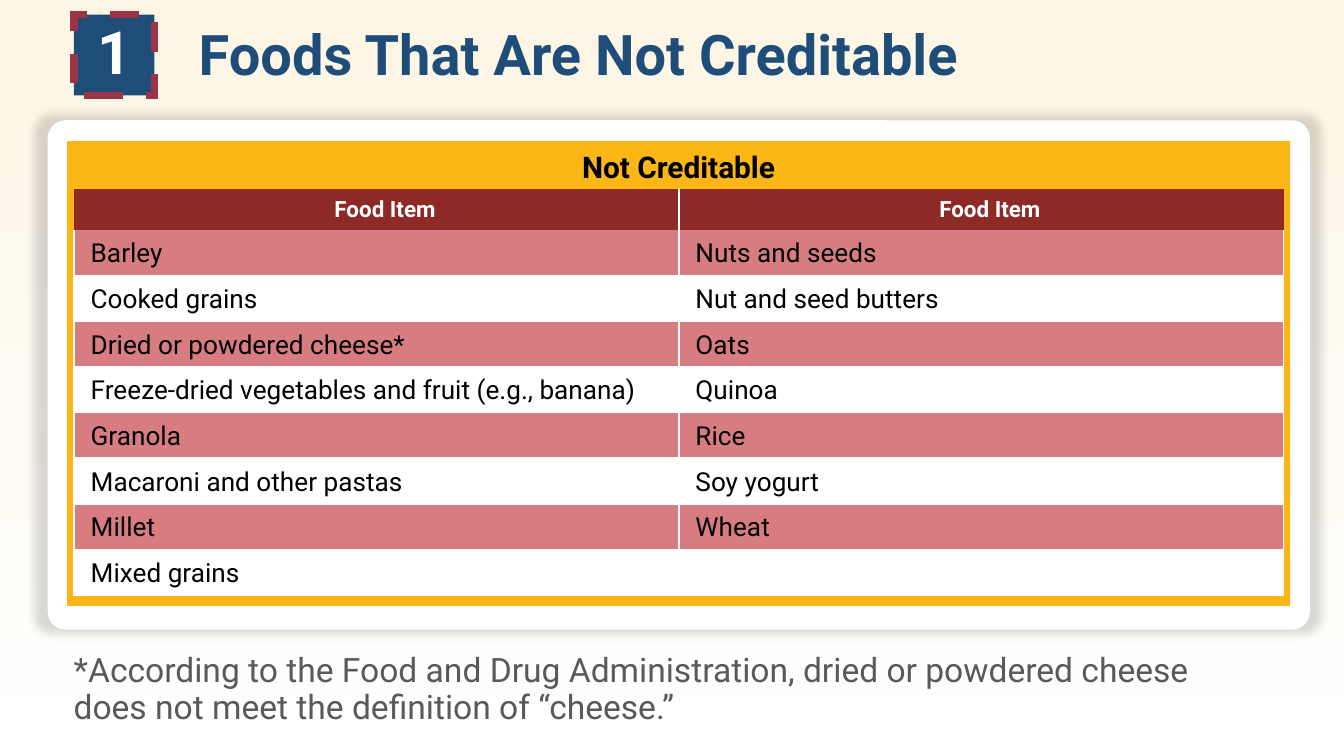
import pptx
import pptx.util
import pptx.dml.color
import pptx.enum.dml
import pptx.enum.shapes
import pptx.enum.text
import pptx.oxml
import pptx.oxml.ns
from dataclasses import dataclass
from itertools import zip_longest
from lxml import etree

NUMBER = "1"
TITLE = "Foods That Are Not Creditable"
BANNER = "Not Creditable"
COLUMN_HEADS = ("Food Item", "Food Item")
LEFT_FOODS = [
    "Barley", "Cooked grains", "Dried or powdered cheese*",
    "Freeze-dried vegetables and fruit (e.g., banana)",
    "Granola", "Macaroni and other pastas", "Millet", "Mixed grains",
]
RIGHT_FOODS = [
    "Nuts and seeds", "Nut and seed butters", "Oats", "Quinoa",
    "Rice", "Soy yogurt", "Wheat",
]
FOOTNOTE = ("*According to the Food and Drug Administration, dried or powdered cheese "
            "does not meet the definition of “cheese.”")


@dataclass(frozen=True)
class Theme:
    font: str = "Roboto"
    cream: str = "FEF6E5"
    white: str = "FFFFFF"
    black: str = "000000"
    navy: str = "1D4D78"
    crimson: str = "9B3546"
    amber: str = "FCB615"
    maroon: str = "8D2A28"
    rose: str = "D77D82"
    grey: str = "595959"
    number_size: int = 32
    title_size: int = 30
    footnote_size: int = 18
    banner_size: int = 16
    food_size: int = 14
    head_size: int = 12


THEME = Theme()
EMU_PER_PX = 4572  # 200 px to the inch
SLIDE = (2000, 1125)
CARD = (71, 179, 1878, 758)
BADGE = (110, 22, 120, 120)
TITLE_BOX = (276, 30, 1634, 104)
BANNER_BOX = (100, 210, 1820, 692)
TABLE = (110, 282, 1800, 604)
FOOTNOTE_BOX = (90, 963, 1820, 142)
HEAD_HEIGHT, FOOD_HEIGHT = 60, 68
BODY_MARGINS = (25, 12, 12, 8)
HEAD_MARGINS = (46, 10, 20, 10)

SHAPES = pptx.enum.shapes.MSO_SHAPE
ALIGN = pptx.enum.text.PP_ALIGN
ANCHOR = pptx.enum.text.MSO_ANCHOR


def px(length):
    return pptx.util.Emu(length * EMU_PER_PX)


def rgb(color):
    return pptx.dml.color.RGBColor.from_string(color)


def paint(fill, color):
    fill.solid()
    fill.fore_color.rgb = rgb(color)


def write(frame, text, size, color, bold=False, align=ALIGN.LEFT, spacing=1.0):
    frame.word_wrap = True
    para = frame.paragraphs[0]
    para.alignment = align
    para.line_spacing = spacing
    if not text:  # keeps an empty cell from growing its row
        etree.SubElement(para._p, pptx.oxml.ns.qn("a:endParaRPr"), sz=str(size * 100))
        return
    span = para.add_run()
    span.text = text
    span.font.name = THEME.font
    span.font.size = pptx.util.Pt(size)
    span.font.bold = bold
    span.font.color.rgb = rgb(color)


def set_margins(target, margins):
    """Set left, top, right and bottom margins of a text frame or cell."""
    for side, length in zip(("left", "top", "right", "bottom"), margins):
        setattr(target, f"margin_{side}", px(length))


def add_block(slide, kind, area, color):
    block = slide.shapes.add_shape(kind, *map(px, area))
    block.shadow.inherit = False
    paint(block.fill, color)
    block.line.fill.background()
    return block


def add_glow(shape):
    """Give the shape a soft shadow slightly larger than itself."""
    effects = shape._element.spPr.find(pptx.oxml.ns.qn("a:effectLst"))
    effects.append(pptx.oxml.parse_xml(
        f'<a:outerShdw {pptx.oxml.ns.nsdecls("a")} blurRad="63500" sx="102000" '
        f'sy="102000" algn="ctr" rotWithShape="0"><a:srgbClr val="{THEME.black}">'
        '<a:alpha val="15000"/></a:srgbClr></a:outerShdw>'))


def add_dashes(shape, color, width):
    """Outline the shape with dashes that meet in sharp corners."""
    paint(shape.line.fill, color)
    shape.line.width = pptx.util.Pt(width)
    shape.line.dash_style = pptx.enum.dml.MSO_LINE.DASH
    outline = shape._element.spPr.find(pptx.oxml.ns.qn("a:ln"))
    etree.SubElement(outline, pptx.oxml.ns.qn("a:miter"), lim="800000")


def add_borders(cell, sides):
    """Draw white 1 pt lines on the named sides and none on the others."""
    properties = cell._tc.get_or_add_tcPr()
    for place, side in enumerate("LRTB"):
        ink = (f'<a:solidFill><a:srgbClr val="{THEME.white}"/></a:solidFill>'
               if side in sides else "<a:noFill/>")
        properties.insert(place, pptx.oxml.parse_xml(
            f'<a:ln{side} {pptx.oxml.ns.nsdecls("a")} w="12700">{ink}</a:ln{side}>'))


def add_text(slide, area, text, **style):
    box = slide.shapes.add_textbox(*map(px, area))
    write(box.text_frame, text, **style)


def add_food_table(slide):
    foods = list(zip_longest(LEFT_FOODS, RIGHT_FOODS, fillvalue=""))
    rows = [COLUMN_HEADS] + foods
    table = slide.shapes.add_table(len(rows), 2, *map(px, TABLE)).table
    for column in table.columns:
        column.width = px(TABLE[2] // 2)
    for r, names in enumerate(rows):
        is_head = r == 0
        table.rows[r].height = px(HEAD_HEIGHT if is_head else FOOD_HEIGHT)
        for c, name in enumerate(names):
            cell = table.cell(r, c)
            cell.vertical_anchor = ANCHOR.MIDDLE
            if is_head:
                color, sides = THEME.maroon, "RL"[c]
                set_margins(cell, HEAD_MARGINS)
                write(cell.text_frame, name, THEME.head_size, THEME.white,
                      bold=True, align=ALIGN.CENTER)
            else:
                color = THEME.rose if r % 2 else THEME.white
                sides = "LRB" if r == 1 else "LRTB"
                set_margins(cell, BODY_MARGINS)
                write(cell.text_frame, name, THEME.food_size, THEME.black)
            paint(cell.fill, color)
            add_borders(cell, sides)


def main():
    deck = pptx.Presentation()
    deck.slide_width, deck.slide_height = map(px, SLIDE)
    slide = deck.slides.add_slide(deck.slide_layouts[6])

    backdrop = slide.background.fill
    backdrop.gradient()
    backdrop.gradient_angle = 270
    for stop, color in zip(backdrop.gradient_stops, (THEME.cream, THEME.white)):
        stop.color.rgb = rgb(color)

    card = add_block(slide, SHAPES.ROUNDED_RECTANGLE, CARD, THEME.white)
    card.adjustments[0] = 0.035
    add_glow(card)

    badge = add_block(slide, SHAPES.RECTANGLE, BADGE, THEME.navy)
    add_dashes(badge, THEME.crimson, 4)
    badge.text_frame.vertical_anchor = ANCHOR.MIDDLE
    write(badge.text_frame, NUMBER, THEME.number_size, THEME.white,
          bold=True, align=ALIGN.CENTER, spacing=0.9)

    add_text(slide, TITLE_BOX, TITLE, size=THEME.title_size, color=THEME.navy,
             bold=True, spacing=0.9)

    banner = add_block(slide, SHAPES.RECTANGLE, BANNER_BOX, THEME.amber)
    banner.text_frame.vertical_anchor = ANCHOR.TOP
    set_margins(banner.text_frame, (20, 12, 20, 6))
    write(banner.text_frame, BANNER, THEME.banner_size, THEME.black,
          bold=True, align=ALIGN.CENTER)

    add_food_table(slide)
    add_text(slide, FOOTNOTE_BOX, FOOTNOTE, size=THEME.footnote_size,
             color=THEME.grey, spacing=0.9)
    deck.save("out.pptx")


if __name__ == "__main__":
    main()
